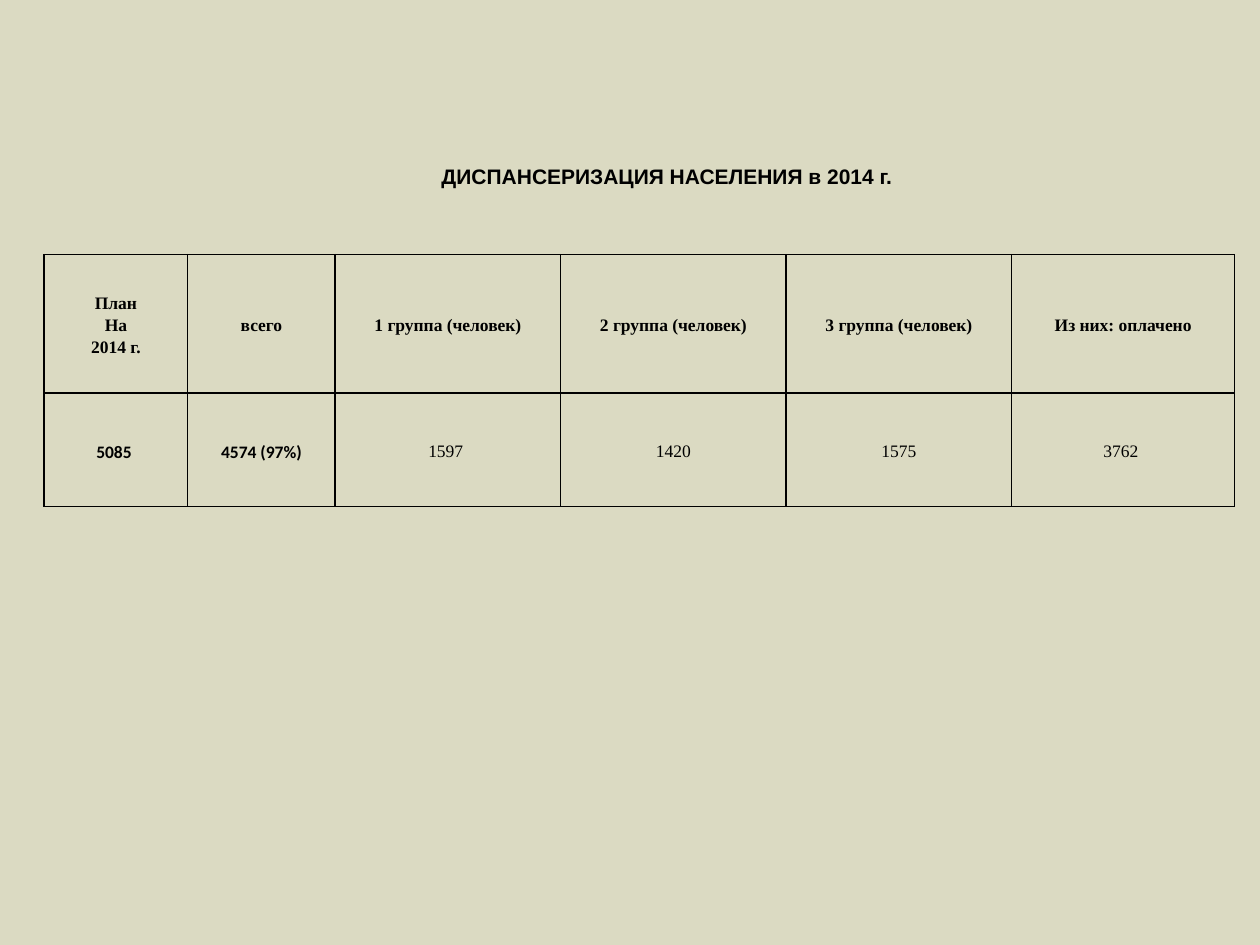
from dataclasses import dataclass
from lxml.etree import SubElement
from pptx import Presentation
from pptx.dml.color import RGBColor
from pptx.enum.text import MSO_ANCHOR as Anchor, PP_ALIGN as Align
from pptx.oxml.ns import qn
from pptx.util import Inches, Pt


@dataclass(frozen=True)
class Theme:
    paper: RGBColor = RGBColor.from_string("DBDAC2")
    ink: RGBColor = RGBColor.from_string("000000")
    title_size: int = 12
    cell_size: int = 10
    title_font: str = "Arial"
    serif: str = "Times New Roman"
    sans: str = "Calibri"


theme = Theme()


def style_text(paragraph, font_name, size, bold):
    paragraph.alignment = Align.CENTER
    for run in paragraph.runs:
        run.font.name = font_name
        run.font.size = Pt(size)
        run.font.bold = bold
        run.font.color.rgb = theme.ink


def add_borders(cell):
    properties = cell._tc.get_or_add_tcPr()
    for position, side in enumerate(("lnL", "lnR", "lnT", "lnB")):
        line = SubElement(properties, qn(f"a:{side}"), w=str(Pt(1)))
        fill = SubElement(line, qn("a:solidFill"))
        SubElement(fill, qn("a:srgbClr"), val=str(theme.ink))
        properties.insert(position, line)


presentation = Presentation()
presentation.slide_width = Inches(10)
presentation.slide_height = Inches(7.5)
slide = presentation.slides.add_slide(presentation.slide_layouts[6])
slide.background.fill.solid()
slide.background.fill.fore_color.rgb = theme.paper

headers = ["План\nНа\n2014 г.", "всего", "1 группа (человек)",
           "2 группа (человек)", "3 группа (человек)", "Из них: оплачено"]
results = ["5085 ", "4574 (97%)", "1597 ", "1420", "1575", "3762 "]
column_widths = [1.14, 1.17, 1.79, 1.79, 1.79, 1.77]
row_heights = [1.1, 0.9]

screening = slide.shapes.add_table(
    len(row_heights), len(headers), Inches(0.35), Inches(2.02),
    Inches(sum(column_widths)), Inches(sum(row_heights))).table
screening.first_row = False
screening.horz_banding = False
for column, width in zip(screening.columns, column_widths):
    column.width = Inches(width)
for row, height in zip(screening.rows, row_heights):
    row.height = Inches(height)

for row_index, texts in enumerate((headers, results)):
    for column_index, text in enumerate(texts):
        cell = screening.cell(row_index, column_index)
        is_header = row_index == 0
        is_total = not is_header and column_index < 2
        cell.text_frame.text = text
        cell.vertical_anchor = Anchor.MIDDLE
        cell.margin_left = cell.margin_right = Inches(0.07)
        cell.margin_top = Inches(0.01)
        cell.margin_bottom = Inches(0)
        cell.fill.background()
        add_borders(cell)
        for paragraph in cell.text_frame.paragraphs:
            paragraph.line_spacing = 1.15
            style_text(paragraph, theme.sans if is_total else theme.serif,
                       theme.cell_size, is_header or is_total)

title = slide.shapes.add_textbox(
    Inches(0), Inches(1.15), Inches(10), Inches(0.5)).text_frame
title.word_wrap = True
title.vertical_anchor = Anchor.MIDDLE
title.text = "ДИСПАНСЕРИЗАЦИЯ НАСЕЛЕНИЯ в 2014 г."
heading = title.paragraphs[0]
heading._p.get_or_add_pPr().set("indent", str(Inches(0.59)))
style_text(heading, theme.title_font, theme.title_size, True)

presentation.save("out.pptx")
